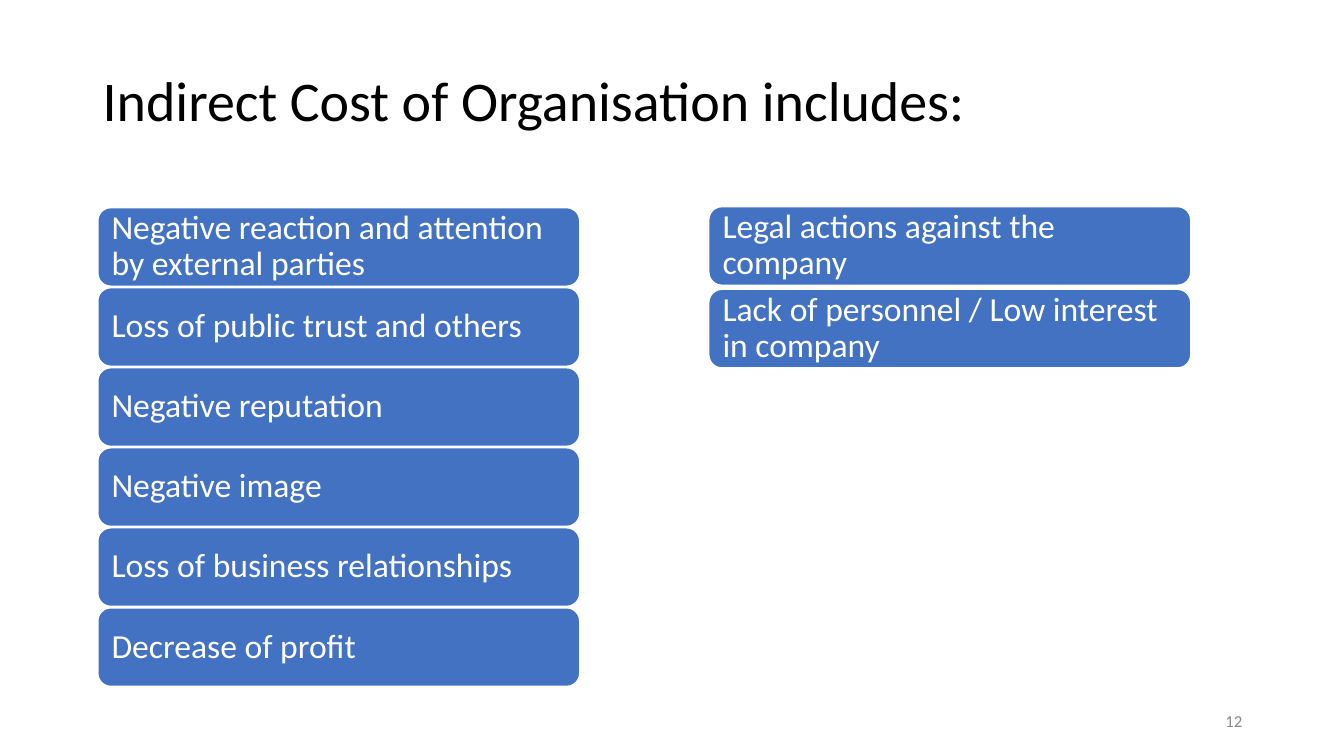
import pptx
import pptx.util
import pptx.dml.color
import pptx.enum.shapes
import pptx.enum.text

Inches = pptx.util.Inches
Pt = pptx.util.Pt
RGBColor = pptx.dml.color.RGBColor
PP_ALIGN = pptx.enum.text.PP_ALIGN

BLUE = RGBColor(0x43, 0x72, 0xC3)
WHITE = RGBColor(0xFF, 0xFF, 0xFF)
BLACK = RGBColor(0x00, 0x00, 0x00)
GREY = RGBColor(0x88, 0x88, 0x88)

CARD_WIDTH = 4.78
CARD_HEIGHT = 0.78
LEFT_COSTS = [
    "Negative reaction and attention by external parties",
    "Loss of public trust and others",
    "Negative reputation",
    "Negative image",
    "Loss of business relationships",
    "Decrease of profit",
]
RIGHT_COSTS = [
    "Legal actions against the company",
    "Lack of personnel / Low interest in company",
]


def write_text(shape, text, size, color, alignment=PP_ALIGN.LEFT, margin=0.05, spacing=None):
    frame = shape.text_frame
    frame.word_wrap = True
    frame.vertical_anchor = pptx.enum.text.MSO_ANCHOR.MIDDLE
    frame.margin_left = frame.margin_right = Inches(0.1)
    frame.margin_top = frame.margin_bottom = Inches(margin)
    paragraph = frame.paragraphs[0]
    paragraph.text = text
    paragraph.alignment = alignment
    paragraph.line_spacing = spacing
    paragraph.font.name = "Calibri"
    paragraph.font.size = Pt(size)
    paragraph.font.color.rgb = color


def add_label(slide, box, text, size, color, **style):
    label = slide.shapes.add_textbox(*map(Inches, box))
    write_text(label, text, size, color, **style)


def add_cost_column(slide, left, top, pitch, costs):
    for row, cost in enumerate(costs):
        card = slide.shapes.add_shape(
            pptx.enum.shapes.MSO_SHAPE.ROUNDED_RECTANGLE,
            Inches(left), Inches(top + row * pitch),
            Inches(CARD_WIDTH), Inches(CARD_HEIGHT),
        )
        card.shadow.inherit = False
        card.fill.solid()
        card.fill.fore_color.rgb = BLUE
        card.line.color.rgb = WHITE
        card.line.width = Pt(1)
        write_text(card, cost, 24, WHITE, margin=0.1, spacing=0.9)


def main():
    presentation = pptx.Presentation()
    presentation.slide_width = Inches(13.33)
    presentation.slide_height = Inches(7.5)
    slide = presentation.slides.add_slide(presentation.slide_layouts[6])
    add_label(slide, (0.92, 0.3, 11.5, 1.45), "Indirect Cost of Organisation includes:",
              40, BLACK, spacing=0.9)
    add_cost_column(slide, 0.97, 2.06, 0.794, LEFT_COSTS)
    add_cost_column(slide, 7.03, 2.05, 0.82, RIGHT_COSTS)
    add_label(slide, (9.42, 6.95, 3, 0.4), "12", 12, GREY, alignment=PP_ALIGN.RIGHT)
    presentation.save("out.pptx")


if __name__ == "__main__":
    main()
